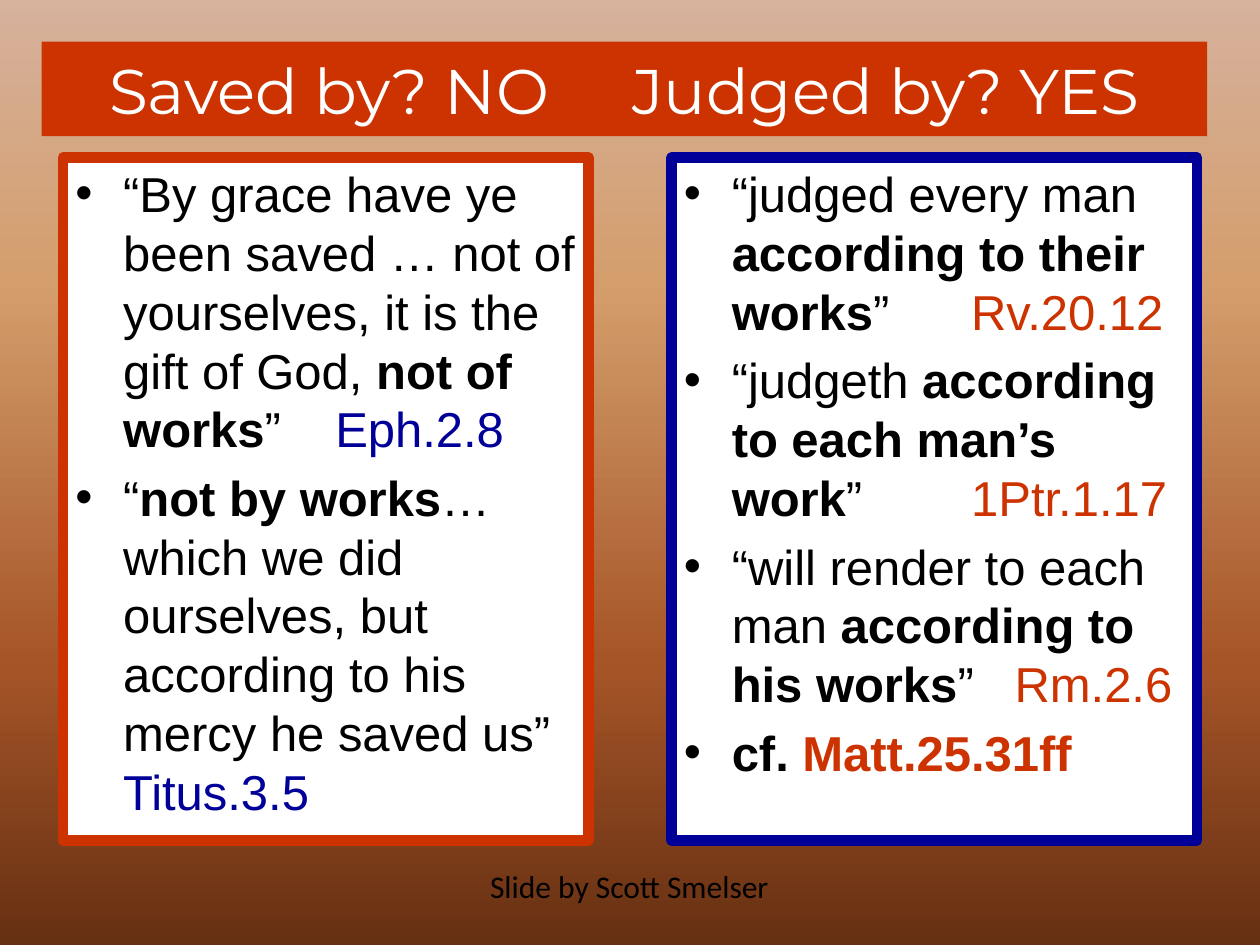
from lxml.etree import SubElement
from pptx import Presentation
from pptx.dml.color import RGBColor
from pptx.enum.shapes import MSO_SHAPE
from pptx.enum.text import MSO_ANCHOR, PP_ALIGN
from pptx.oxml.ns import qn
from pptx.util import Inches, Pt

RED, BLUE, WHITE, BLACK = "CC3300", "000099", "FFFFFF", "000000"
BACKGROUND_STOPS = [(0, "D6B19C"), (30, "D49E6C"), (70, "A65528"), (100, "663012")]
BODY_SIZE = 28

SAVED_VERSES = [
    [("“By grace have ye been saved … not of yourselves, it is the gift of God, ", {}),
     ("not of works", {"bold": True}), ("”", {}), (" ", {"spacing": 23.3}),
     ("Eph.2.8", {"color": BLUE})],
    [("“", {}), ("not by works", {"bold": True}),
     ("… which we did ourselves, but according to his mercy he saved us” ", {}),
     ("Titus.3.5", {"color": BLUE})],
]
JUDGED_VERSES = [
    [("“judged every man ", {}), ("according to their works", {"bold": True}),
     ("”", {}), (" ", {"spacing": 38.9}), ("Rv.20.12", {"color": RED})],
    [("“judgeth", {}), (" according to each man’s work", {"bold": True}),
     ("”", {}), (" ", {"spacing": 54.5}), ("1Ptr.1.17", {"color": RED})],
    [("“will render to each man ", {}), ("according to his works", {"bold": True}),
     ("”", {}), (" ", {"spacing": 15.6}), ("Rm.2.6", {"color": RED})],
    [("cf. ", {"bold": True}), ("Matt.25.31ff", {"bold": True, "color": RED})],
]


def rgb(color):
    return RGBColor.from_string(color)


def add_text(paragraph, text, font="Arial", size=BODY_SIZE, color=BLACK, bold=False, spacing=0):
    run = paragraph.add_run()
    run.text = text
    run.font.name = font
    run.font.size = Pt(size)
    run.font.bold = bold
    run.font.color.rgb = rgb(color)
    if spacing:
        run._r.get_or_add_rPr().set("spc", str(round(spacing * 100)))


def add_box(slide, box, fill, line=None):
    shape = slide.shapes.add_shape(MSO_SHAPE.RECTANGLE, *map(Inches, box))
    shape.shadow.inherit = False
    shape.fill.solid()
    shape.fill.fore_color.rgb = rgb(fill)
    if line:
        shape.line.color.rgb = rgb(line)
        shape.line.width = Pt(6)
    else:
        shape.line.fill.background()
    shape.text_frame.word_wrap = True
    return shape


def paint_background(slide):
    slide.background.fill.gradient()
    gradient = next(slide.element.iter(qn("a:gradFill")))
    for child in list(gradient):
        gradient.remove(child)
    stops = SubElement(gradient, qn("a:gsLst"))
    for position, color in BACKGROUND_STOPS:
        stop = SubElement(stops, qn("a:gs"), pos=str(position * 1000))
        SubElement(stop, qn("a:srgbClr"), val=color)
    SubElement(gradient, qn("a:lin"), ang=str(90 * 60000), scaled="0")


def add_title(slide, box):
    frame = add_box(slide, box, RED).text_frame
    frame.vertical_anchor = MSO_ANCHOR.MIDDLE
    paragraph = frame.paragraphs[0]
    paragraph.alignment = PP_ALIGN.CENTER
    for text, spacing in [("Saved by? NO", 0), (" ", 38), ("Judged by? YES", 0)]:
        add_text(paragraph, text, font="Montserrat", size=36, color=WHITE, spacing=spacing)


def add_bullet(paragraph):
    properties = paragraph._p.get_or_add_pPr()
    properties.set("marL", str(Inches(0.38)))
    properties.set("indent", str(Inches(-0.38)))
    SubElement(properties, qn("a:buFont"), typeface="Arial")
    SubElement(properties, qn("a:buChar"), char="•")


def add_verse_panel(slide, box, border, verses):
    frame = add_box(slide, box, WHITE, border).text_frame
    frame.vertical_anchor = MSO_ANCHOR.TOP
    for index, verse in enumerate(verses):
        paragraph = frame.add_paragraph() if index else frame.paragraphs[0]
        paragraph.alignment = PP_ALIGN.LEFT
        paragraph.line_spacing = Pt(BODY_SIZE * 1.2)
        paragraph.space_before = Pt(BODY_SIZE * 0.2 if index else 0)
        add_bullet(paragraph)
        for text, text_format in verse:
            add_text(paragraph, text, **text_format)


def add_credit(slide, box):
    frame = slide.shapes.add_textbox(*map(Inches, box)).text_frame
    frame.word_wrap = True
    paragraph = frame.paragraphs[0]
    paragraph.alignment = PP_ALIGN.CENTER
    add_text(paragraph, "Slide by Scott Smelser", font="Calibri", size=18)


def main():
    presentation = Presentation()
    presentation.slide_width, presentation.slide_height = Inches(10), Inches(7.5)
    slide = presentation.slides.add_slide(presentation.slide_layouts[6])
    paint_background(slide)
    add_title(slide, (0.33, 0.33, 9.25, 0.75))
    panels = [(0.5, RED, SAVED_VERSES), (5.33, BLUE, JUDGED_VERSES)]
    for left, border, verses in panels:
        add_verse_panel(slide, (left, 1.25, 4.17, 5.42), border, verses)
    add_credit(slide, (3.74, 6.83, 2.51, 0.4))
    presentation.save("out.pptx")


if __name__ == "__main__":
    main()
